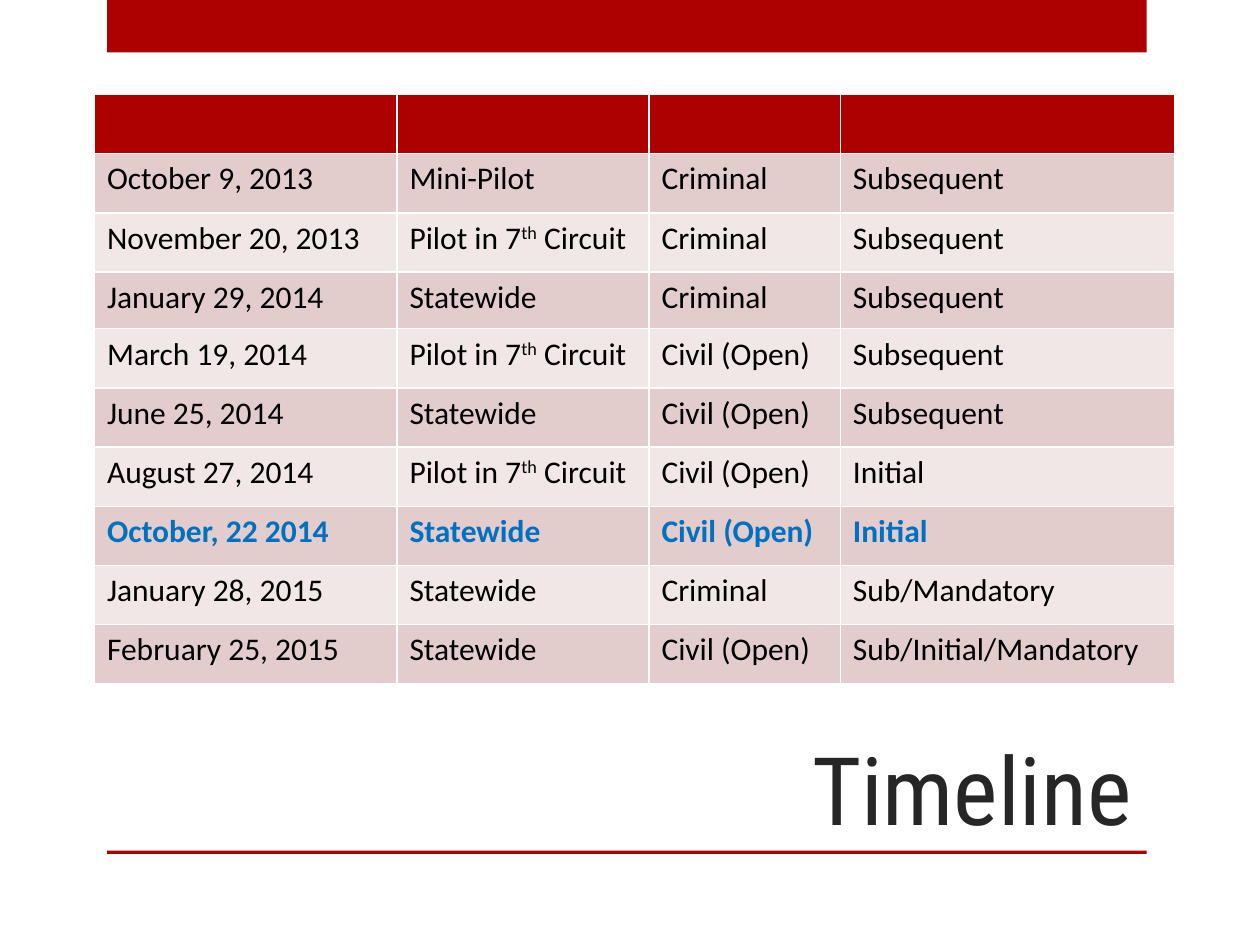
from pptx import Presentation
from pptx.dml.color import RGBColor
from pptx.enum.shapes import MSO_SHAPE
from pptx.enum.text import MSO_ANCHOR, MSO_AUTO_SIZE, PP_ALIGN
from pptx.util import Pt

COLORS = {"red": "AD0101", "title": "262626", "text": "000000",
          "highlight": "0070C0", "odd": "E3CCCC", "even": "F1E7E7"}
COLUMN_WIDTHS = [172.8, 144, 109.44, 190.8]
ROW_HEIGHT = 33.84
SHORT_ROW, SHORT_HEIGHT = 3, 32.4
HIGHLIGHT_ROW = 7
PILOT = ["Pilot in 7", "^th", " Circuit"]
STATEWIDE = ["Statewide"]
SCHEDULE = [
    ("October 9, 2013", ["Mini-Pilot"], "Criminal", "Subsequent"),
    ("November 20, 2013", PILOT, "Criminal", "Subsequent"),
    ("January 29, 2014", STATEWIDE, "Criminal", "Subsequent"),
    ("March 19, 2014", PILOT, "Civil (Open)", "Subsequent"),
    ("June 25, 2014", STATEWIDE, "Civil (Open)", "Subsequent"),
    ("August 27, 2014", PILOT, "Civil (Open)", "Initial"),
    ("October, 22 2014", STATEWIDE, "Civil (Open)", "Initial"),
    ("January 28, 2015", STATEWIDE, "Criminal", "Sub/Mandatory"),
    ("February 25, 2015", STATEWIDE, "Civil (Open)", "Sub/Initial/Mandatory"),
]


def color(name):
    return RGBColor.from_string(COLORS[name])


def add_run(p, text, font, size, fill, bold=False):
    r = p.add_run()
    r.text = text
    r.font.name = font
    r.font.size = Pt(size)
    r.font.bold = bold
    r.font.color.rgb = color(fill)
    return r


def add_bar(s, x, y, w, h):
    sp = s.shapes.add_shape(MSO_SHAPE.RECTANGLE, Pt(x), Pt(y), Pt(w), Pt(h))
    sp.shadow.inherit = False
    sp.fill.solid()
    sp.fill.fore_color.rgb = color("red")
    sp.line.fill.background()


def add_title(s, text, x, y, w, h):
    sp = s.shapes.title
    sp.left, sp.top, sp.width, sp.height = Pt(x), Pt(y), Pt(w), Pt(h)
    tf = sp.text_frame
    tf.auto_size = MSO_AUTO_SIZE.NONE
    tf.vertical_anchor = MSO_ANCHOR.BOTTOM
    p = tf.paragraphs[0]
    p.alignment = PP_ALIGN.RIGHT
    add_run(p, text, "Roboto Condensed", 54, "title")


def fill_cell(cell, fill, parts=(), highlighted=False):
    cell.fill.solid()
    cell.fill.fore_color.rgb = color(fill)
    p = cell.text_frame.paragraphs[0]
    for part in parts:
        r = add_run(p, part.lstrip("^"), "Calibri", 18,
                    "highlight" if highlighted else "text", highlighted)
        if part.startswith("^"):
            r.font._element.set("baseline", "30000")


def add_schedule(s, x, y):
    heights = [SHORT_HEIGHT if i == SHORT_ROW else ROW_HEIGHT
               for i in range(len(SCHEDULE) + 1)]
    table = s.shapes.add_table(len(heights), len(COLUMN_WIDTHS), Pt(x), Pt(y),
                               Pt(sum(COLUMN_WIDTHS)), Pt(sum(heights))).table
    for column, width in zip(table.columns, COLUMN_WIDTHS):
        column.width = Pt(width)
    for row, height in zip(table.rows, heights):
        row.height = Pt(height)
    for cell in table.rows[0].cells:
        fill_cell(cell, "red")
    for i, (date, scope, case, filing) in enumerate(SCHEDULE, 1):
        fill = "odd" if i % 2 else "even"
        for cell, parts in zip(table.rows[i].cells, ([date], scope, [case], [filing])):
            fill_cell(cell, fill, parts, i == HIGHLIGHT_ROW)


def main():
    prs = Presentation()
    prs.slide_width, prs.slide_height = Pt(720), Pt(540)
    s = prs.slides.add_slide(prs.slide_layouts[5])
    add_bar(s, 61.2, 0, 594, 30)
    add_bar(s, 61.2, 486, 594, 2)
    add_title(s, "Timeline", 60, 360, 594, 126)
    add_schedule(s, 54, 54)
    prs.save("out.pptx")


if __name__ == "__main__":
    main()
